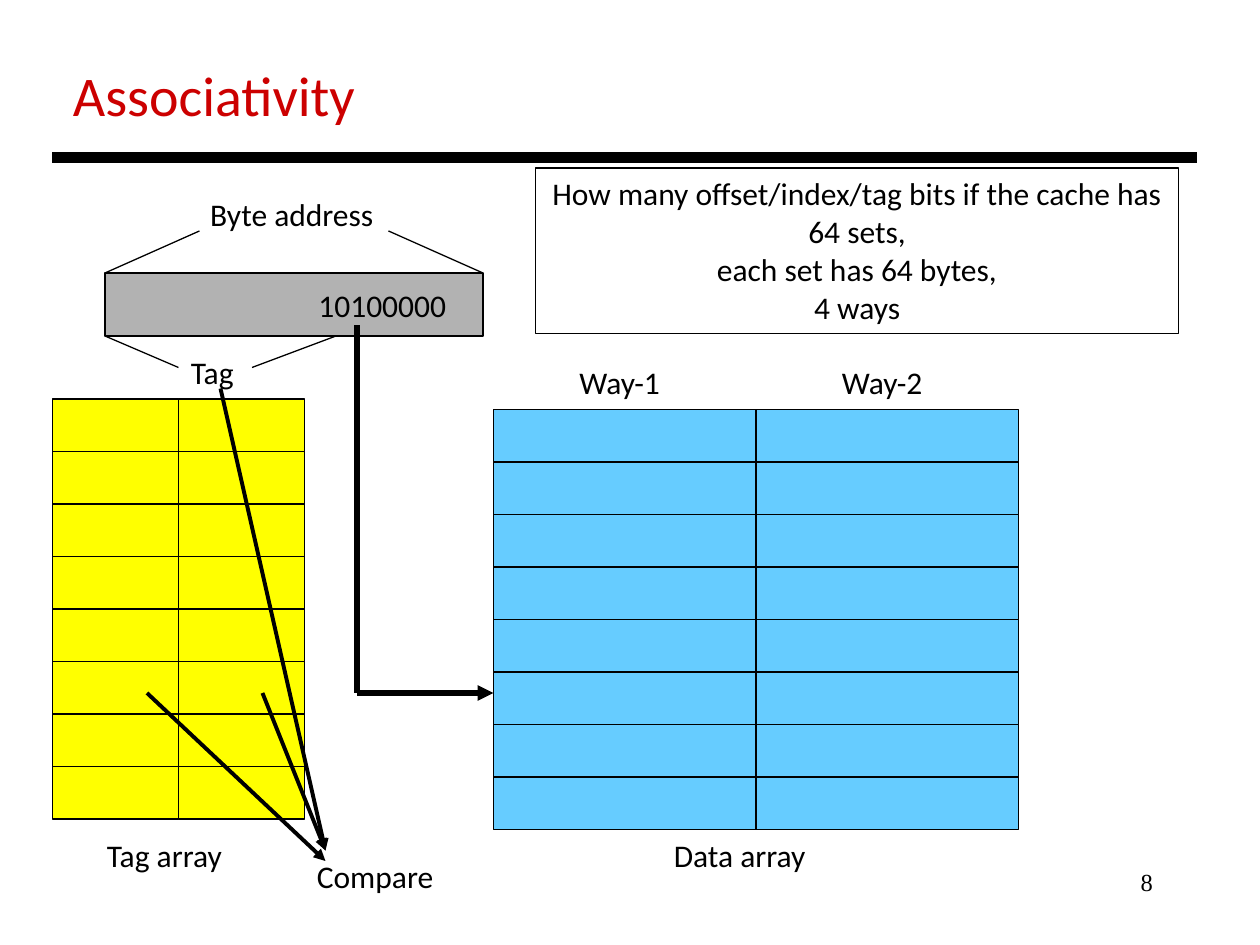
from pptx import Presentation
from pptx.dml.color import RGBColor
from pptx.enum.shapes import MSO_CONNECTOR as Conn, MSO_SHAPE as Kind
from pptx.enum.text import MSO_ANCHOR as Anchor, PP_ALIGN as Align
from pptx.oxml.ns import qn
from pptx.util import Pt
from lxml.etree import SubElement

BLACK = RGBColor(0x00, 0x00, 0x00)
RED = RGBColor(0xCC, 0x00, 0x00)
GREY = RGBColor(0xB2, 0xB2, 0xB2)
BLUE = RGBColor(0x66, 0xCC, 0xFF)
YELLOW = RGBColor(0xFF, 0xFF, 0x00)


def add_box(x, y, wide, high, fill=None):
    box = slide.shapes.add_shape(Kind.RECTANGLE, Pt(x), Pt(y), Pt(wide), Pt(high))
    box.shadow.inherit = False
    if fill is None:
        box.fill.background()
    else:
        box.fill.solid()
        box.fill.fore_color.rgb = fill
    box.line.color.rgb = BLACK
    box.line.width = Pt(0.75)
    return box


def add_text(shape, lines, align=Align.LEFT, size=18, color=BLACK, face="Calibri"):
    frame = shape.text_frame
    frame.word_wrap = False
    for i, line in enumerate(lines):
        para = frame.add_paragraph() if i else frame.paragraphs[0]
        para.alignment = align
        run = para.add_run()
        run.text = line
        run.font.name = face
        run.font.size = Pt(size)
        run.font.color.rgb = color


deck = Presentation()
deck.slide_width, deck.slide_height = Pt(720), Pt(540)
slide = deck.slides.add_slide(deck.slide_layouts[6])

title = slide.shapes.add_textbox(Pt(34.6), Pt(31), Pt(178), Pt(46))
add_text(title, ["Associativity"], size=32, color=RED)

number = slide.shapes.add_textbox(Pt(516), Pt(492), Pt(150), Pt(36))
add_text(number, ["8"], Align.RIGHT, size=14, face="Times New Roman")

for left, top, wide, fill in [(282, 234, 150, BLUE), (30, 228, 72, YELLOW)]:
    for col in range(2):
        for row in range(8):
            add_box(left + col * wide, top + row * 30, wide, 30, fill)

address = add_box(60, 156, 216, 36, GREY)
add_text(address, ["10100000"], Align.RIGHT)
address.text_frame.margin_right = Pt(21)
address.text_frame.vertical_anchor = Anchor.MIDDLE

query = add_box(306, 96, 367.5, 94.5)
add_text(query, [
    "How many offset/index/tag bits if the cache has",
    "64 sets,",
    "each set has 64 bytes,",
    "4 ways",
], Align.CENTER)
query.text_frame.vertical_anchor = Anchor.TOP

for text, x, y, wide in [
    ("Byte address", 113, 108, 109),
    ("Tag", 102, 198, 40),
    ("Way-1", 324, 204, 61),
    ("Way-2", 474, 204, 61),
    ("Tag array", 54, 474, 81),
    ("Data array", 378, 474, 91),
    ("Compare", 174, 486, 82),
]:
    label = slide.shapes.add_textbox(Pt(x), Pt(y), Pt(wide), Pt(29))
    add_text(label, [text])

for x1, y1, x2, y2, width, arrow in [
    (30, 90, 684, 90, 6, False),
    (114, 132, 60, 156, 0.75, False),
    (222, 132, 276, 156, 0.75, False),
    (60, 192, 102, 210, 0.75, False),
    (144, 210, 192, 192, 0.75, False),
    (204, 186, 204, 396, 3, False),
    (204, 396, 282, 396, 3, True),
    (84, 396, 186, 492, 2.25, True),
    (150, 396, 186, 486, 2.25, True),
    (126, 222, 186, 486, 2.25, True),
]:
    link = slide.shapes.add_connector(Conn.STRAIGHT, Pt(x1), Pt(y1), Pt(x2), Pt(y2))
    link.line.color.rgb = BLACK
    link.line.width = Pt(width)
    if arrow:
        SubElement(link.line._get_or_add_ln(), qn("a:tailEnd"), type="triangle")
    SubElement(link._element.spPr, qn("a:effectLst"))

deck.save("out.pptx")
